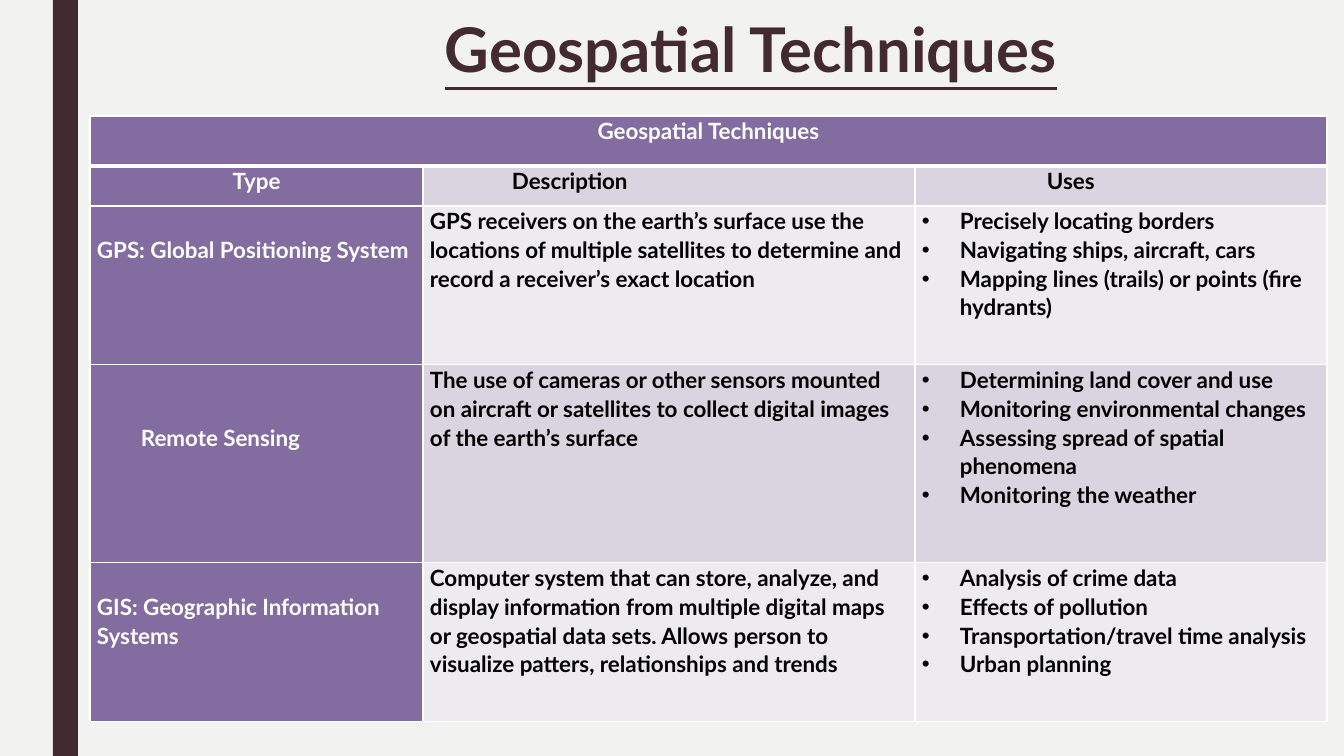
from lxml import etree
from pptx import Presentation
from pptx.dml.color import RGBColor
from pptx.enum.shapes import MSO_SHAPE
from pptx.enum.text import MSO_ANCHOR, PP_ALIGN
from pptx.oxml.ns import qn
from pptx.util import Emu, Pt

RECTANGLE = MSO_SHAPE.RECTANGLE
LEFT, CENTER = PP_ALIGN.LEFT, PP_ALIGN.CENTER
TOP = MSO_ANCHOR.TOP

FONT = "Lato"
PAPER = RGBColor(0xF2, 0xF2, 0xF0)
PLUM = RGBColor(0x43, 0x2A, 0x30)
PURPLE = RGBColor(0x83, 0x6C, 0x9F)
LILAC = RGBColor(0xD9, 0xD4, 0xDF)
PALE = RGBColor(0xED, 0xEB, 0xF0)
WHITE = RGBColor(0xFF, 0xFF, 0xFF)
BLACK = RGBColor(0x00, 0x00, 0x00)

PAGE_WIDTH, PAGE_HEIGHT = 1344, 756
COLUMNS = [333, 492, 412]
ROWS = [50, 40, 159, 198, 159]
INSET = 7
LINE = 29
BULLET_INDENT = 38

# Each technique: label, label left inset, blank lines above it, description, uses
TECHNIQUES = [
    ("GPS: Global Positioning System", INSET, 1,
     "GPS receivers on the earth’s surface use the locations of multiple "
     "satellites to determine and record a receiver’s exact location",
     ["Precisely locating borders",
      "Navigating ships, aircraft, cars",
      "Mapping lines (trails) or points (fire hydrants)"]),
    ("Remote Sensing", 51, 2,
     "The use of cameras or other sensors mounted on aircraft or satellites "
     "to collect digital images of the earth’s surface",
     ["Determining land cover and use",
      "Monitoring environmental changes",
      "Assessing spread of spatial phenomena",
      "Monitoring the weather"]),
    ("GIS: Geographic Information Systems", INSET, 1,
     "Computer system that can store, analyze, and display information from "
     "multiple digital maps or geospatial data sets. Allows person to "
     "visualize patters, relationships and trends",
     ["Analysis of crime data",
      "Effects of pollution",
      "Transportation/travel time analysis",
      "Urban planning"]),
]


def px(length):
    return Emu(round(length * 914400 / 100.8))


def add_span(para, text, size, color):
    span = para.add_run()
    span.text = text
    span.font.name = FONT
    span.font.size = Pt(size)
    span.font.bold = True
    span.font.color.rgb = color
    return span


def add_bullet(para):
    props = para._p.get_or_add_pPr()
    props.set("marL", str(px(BULLET_INDENT)))
    props.set("indent", str(-px(BULLET_INDENT)))
    etree.SubElement(props, qn("a:buFont"), typeface="Arial")
    etree.SubElement(props, qn("a:buChar"), char="•")


def set_borders(cell, bottom):
    props = cell._tc.get_or_add_tcPr()
    for side, width in (("L", 1), ("R", 1), ("T", 1), ("B", bottom)):
        line = etree.SubElement(props, qn(f"a:ln{side}"), w=str(Pt(width)))
        fill = etree.SubElement(line, qn("a:solidFill"))
        etree.SubElement(fill, qn("a:srgbClr"), val=str(WHITE))


def fill_cell(cell, lines, back, color, left=INSET, top=0, align=LEFT,
              bullets=False, bottom=1):
    set_borders(cell, bottom)
    cell.fill.solid()
    cell.fill.fore_color.rgb = back
    cell.margin_left, cell.margin_right = px(left), px(INSET)
    cell.margin_top, cell.margin_bottom = px(top), 0
    cell.vertical_anchor = TOP
    frame = cell.text_frame
    for index, text in enumerate(lines):
        para = frame.add_paragraph() if index else frame.paragraphs[0]
        if bullets:
            add_bullet(para)
        para.alignment = align
        para.line_spacing = 1.07
        add_span(para, text, 16, color)


def add_side_bar(page):
    bar = page.shapes.add_shape(RECTANGLE, px(53), 0, px(25), px(PAGE_HEIGHT))
    bar.shadow.inherit = False
    bar.fill.solid()
    bar.fill.fore_color.rgb = PLUM
    bar.line.fill.background()


def add_title(page, text):
    box = page.shapes.add_textbox(px(445), px(20), px(765), px(90))
    frame = box.text_frame
    frame.word_wrap = True
    frame.vertical_anchor = TOP
    frame.margin_left = frame.margin_right = 0
    frame.margin_top = frame.margin_bottom = 0
    para = frame.paragraphs[0]
    para.line_spacing = 0.89
    add_span(para, text, 44, PLUM).font.underline = True


def add_techniques_table(page):
    table = page.shapes.add_table(
        len(ROWS), len(COLUMNS), px(90), px(116),
        px(sum(COLUMNS)), px(sum(ROWS))).table
    table.first_row = table.horz_banding = False
    for column, width in zip(table.columns, COLUMNS):
        column.width = px(width)
    for row, height in zip(table.rows, ROWS):
        row.height = px(height)

    # Heading across all columns
    table.cell(0, 0).merge(table.cell(0, 2))
    fill_cell(table.cell(0, 0), ["Geospatial Techniques"], PURPLE, WHITE,
              align=CENTER, bottom=3)
    for column in (1, 2):
        fill_cell(table.cell(0, column), [], PURPLE, WHITE, bottom=3)

    # Column headings
    fill_cell(table.cell(1, 0), ["Type"], PURPLE, WHITE, align=CENTER)
    fill_cell(table.cell(1, 1), ["Description"], LILAC, BLACK, left=89)
    fill_cell(table.cell(1, 2), ["Uses"], LILAC, BLACK, left=132)

    # One row per technique, in alternating tints
    for row, technique in enumerate(TECHNIQUES, start=2):
        label, left, skipped, description, uses = technique
        tint = LILAC if row % 2 else PALE
        fill_cell(table.cell(row, 0), [label], PURPLE, WHITE,
                  left=left, top=skipped * LINE)
        fill_cell(table.cell(row, 1), [description], tint, BLACK)
        fill_cell(table.cell(row, 2), uses, tint, BLACK, bullets=True)


def main():
    deck = Presentation()
    deck.slide_width, deck.slide_height = px(PAGE_WIDTH), px(PAGE_HEIGHT)
    page = deck.slides.add_slide(deck.slide_layouts[6])
    page.background.fill.solid()
    page.background.fill.fore_color.rgb = PAPER
    add_side_bar(page)
    add_title(page, "Geospatial Techniques")
    add_techniques_table(page)
    deck.save("out.pptx")


if __name__ == "__main__":
    main()
